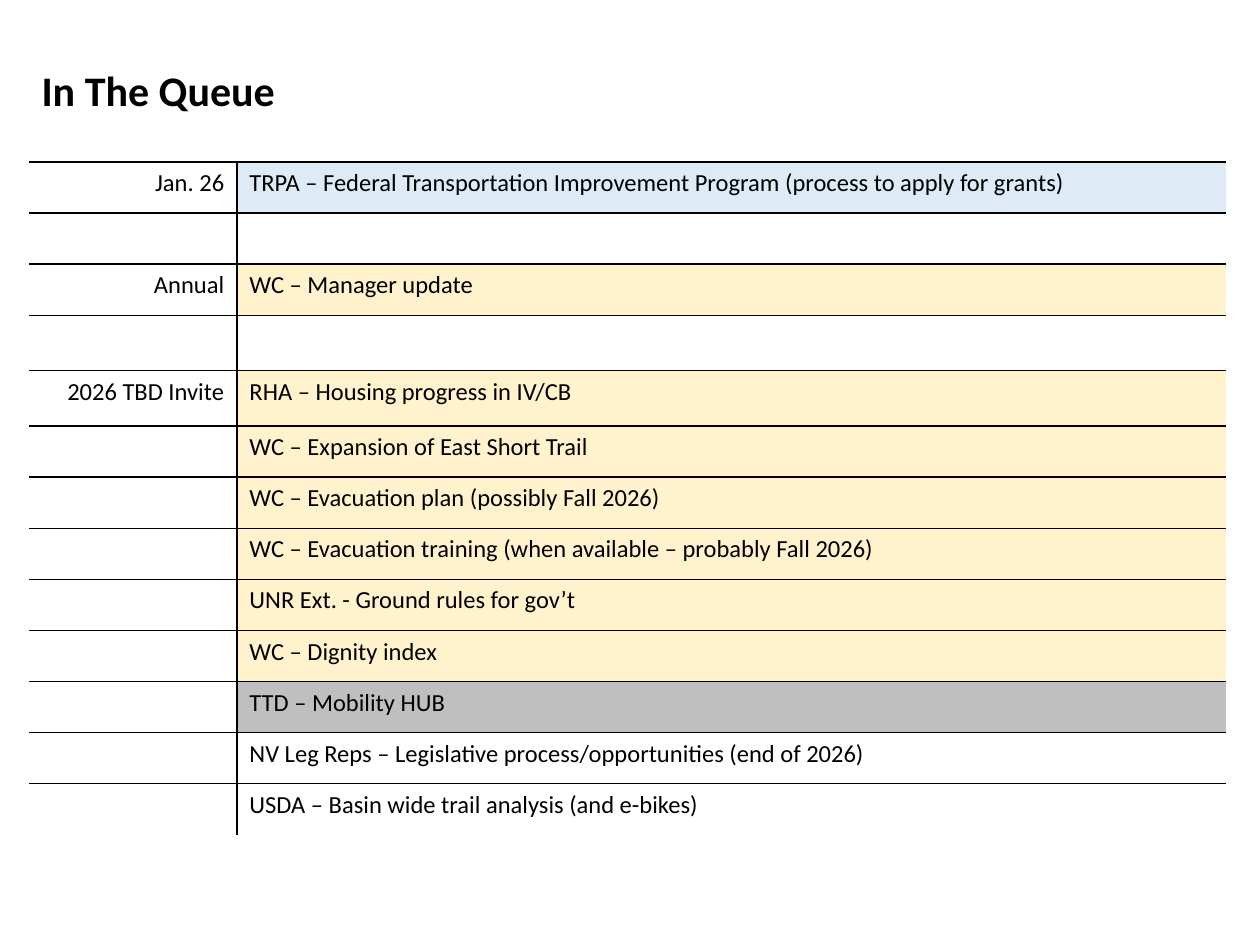
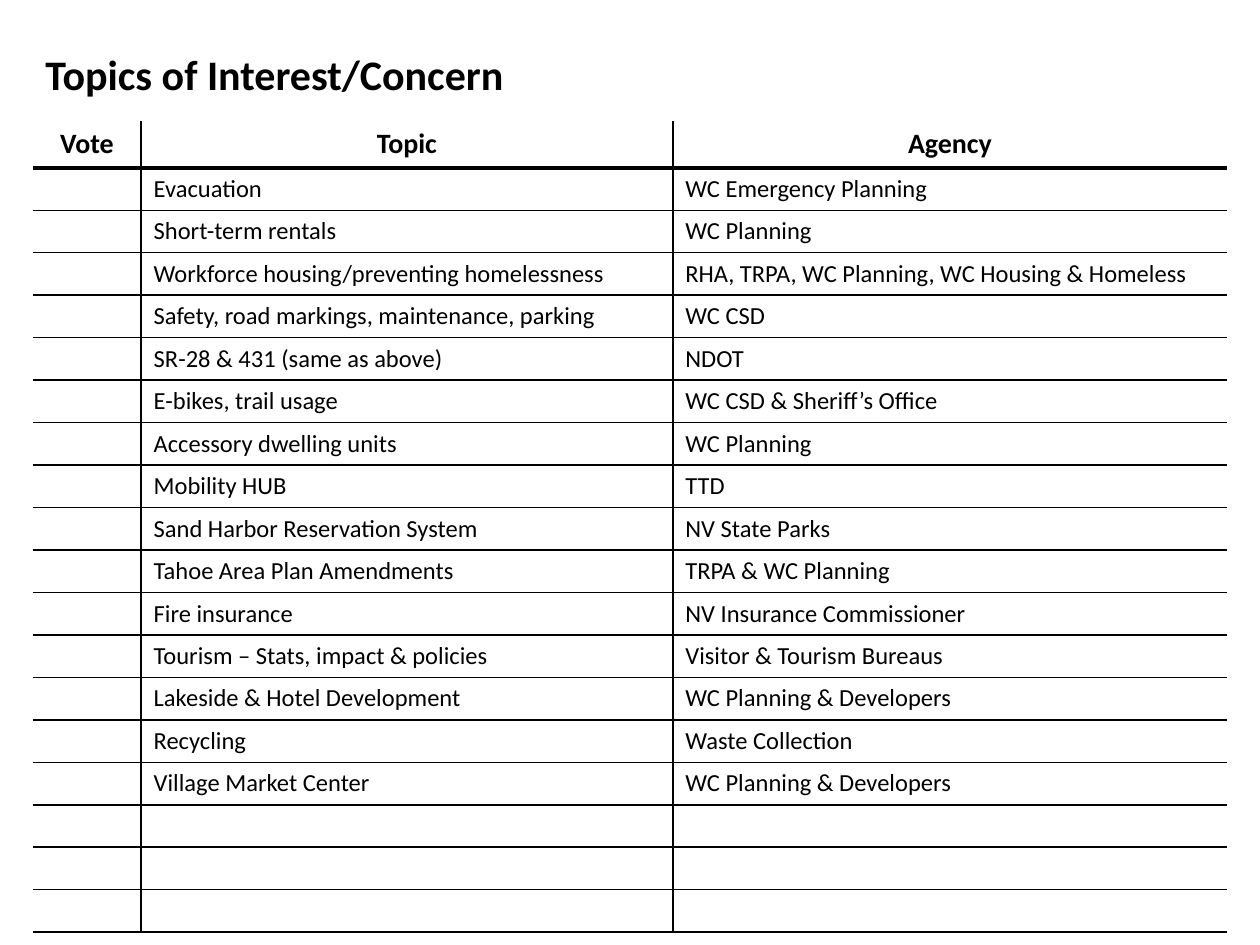
from dataclasses import dataclass

from lxml.etree import SubElement
from pptx import Presentation
from pptx.dml.color import RGBColor
from pptx.enum.text import MSO_ANCHOR as Anchor, MSO_AUTO_SIZE as AutoSize, PP_ALIGN as Align
from pptx.oxml.ns import qn
from pptx.util import Inches, Pt


@dataclass(frozen=True)
class Theme:
    font: str = "Calibri"
    ink: str = "000000"
    blue: str = "DEEBF7"
    yellow: str = "FFF2CC"
    grey: str = "BFBFBF"
    title_size: int = 24
    header_size: int = 16
    body_size: int = 14
    rule: float = 1
    heavy_rule: float = 2.25
    plain_table: str = "{2D5ABB26-0587-4C30-8999-92F81FD0307C}"


theme = Theme()


def add_text(para, text, size, bold=False):
    """Add one run, or size the line when the paragraph stays empty."""
    if not text:
        SubElement(para._p, qn("a:endParaRPr"), sz=str(size * 100))
        return
    span = para.add_run()
    span.text = text
    span.font.name = theme.font
    span.font.size = Pt(size)
    span.font.bold = bold
    span.font.color.rgb = RGBColor.from_string(theme.ink)


def add_border(cell, side, weight):
    """Rule one side (L, R, T or B); a weight of 0 leaves it unruled."""
    line = SubElement(cell._tc.get_or_add_tcPr(), qn(f"a:ln{side}"), w=str(Pt(weight)))
    if weight:
        color = SubElement(SubElement(line, qn("a:solidFill")), qn("a:srgbClr"))
        color.set("val", theme.ink)
    else:
        SubElement(line, qn("a:noFill"))


# Queue: date, item, fill of the item
queue = [
    ("", "", None),
    ("Jan. 26", "TRPA – Federal Transportation Improvement Program (process to apply for grants)", theme.blue),
    ("", "", None),
    ("Annual", "WC – Manager update", theme.yellow),
    ("", "", None),
    ("2026 TBD Invite", "RHA – Housing progress in IV/CB", theme.yellow),
    ("", "WC – Expansion of East Short Trail", theme.yellow),
    ("", "WC – Evacuation plan (possibly Fall 2026)", theme.yellow),
    ("", "WC – Evacuation training (when available – probably Fall 2026)", theme.yellow),
    ("", "UNR Ext. - Ground rules for gov’t", theme.yellow),
    ("", "WC – Dignity index", theme.yellow),
    ("", "TTD – Mobility HUB", theme.grey),
    ("", "NV Leg Reps – Legislative process/opportunities (end of 2026)", None),
    ("", "USDA – Basin wide trail analysis (and e-bikes)", None),
]

# Topics: topic, agency; the last rows stay open for new topics
topics = [
    ("Evacuation", "WC Emergency Planning"),
    ("Short-term rentals", "WC Planning"),
    ("Workforce housing/preventing homelessness", "RHA, TRPA, WC Planning, WC Housing & Homeless"),
    ("Safety, road markings, maintenance, parking", "WC CSD"),
    ("SR-28 & 431 (same as above)", "NDOT"),
    ("E-bikes, trail usage", "WC CSD & Sheriff’s Office"),
    ("Accessory dwelling units", "WC Planning"),
    ("Mobility HUB", "TTD"),
    ("Sand Harbor Reservation System", "NV State Parks"),
    ("Tahoe Area Plan Amendments", "TRPA & WC Planning"),
    ("Fire insurance", "NV Insurance Commissioner"),
    ("Tourism – Stats, impact & policies", "Visitor & Tourism Bureaus"),
    ("Lakeside & Hotel Development", "WC Planning & Developers"),
    ("Recycling", "Waste Collection"),
    ("Village Market Center", "WC Planning & Developers"),
] + [("", "")] * 3

# tall_rows gives heights that differ; the other rows share the rest equally
pages = [
    dict(
        title="In The Queue", title_box=(0.23, 0.4, 8.62, 0.68),
        table_box=(0.23, 0.88, 9.5, 5.75), columns=(1.65, 7.85),
        tall_rows={4: 0.44, 5: 0.44},
        rows=[(date, item) for date, item, _ in queue],
        fills=[(None, fill) for _, _, fill in queue],
        aligns=(Align.RIGHT, Align.LEFT), has_header=False,
    ),
    dict(
        title="Topics of Interest/Concern", title_box=(0.26, 0.16, 8.62, 0.9),
        table_box=(0.26, 0.96, 9.48, 6.37), columns=(0.86, 4.22, 4.4),
        tall_rows={0: 0.34},
        rows=[("Vote", "Topic", "Agency")] + [("", topic, agency) for topic, agency in topics],
        fills=[(None, None, None)] * (len(topics) + 1),
        aligns=(Align.LEFT,) * 3, has_header=True,
    ),
]

deck = Presentation()
deck.slide_width, deck.slide_height = Inches(10), Inches(7.5)

for spec in pages:
    page = deck.slides.add_slide(deck.slide_layouts[5])

    # Title
    title = page.shapes.title
    title.left, title.top, title.width, title.height = map(Inches, spec["title_box"])
    frame = title.text_frame
    frame.word_wrap = True
    frame.auto_size = AutoSize.NONE
    frame.vertical_anchor = Anchor.MIDDLE
    para = frame.paragraphs[0]
    para.alignment = Align.LEFT
    para.line_spacing = 0.9
    add_text(para, spec["title"], theme.title_size, bold=True)

    # Table grid
    rows, columns, tall = spec["rows"], spec["columns"], spec["tall_rows"]
    has_header = spec["has_header"]
    box = page.shapes.add_table(len(rows), len(columns), *map(Inches, spec["table_box"]))
    table = box.table
    table.first_row = has_header
    table.horz_banding = False
    table._tbl.tblPr.find(qn("a:tableStyleId")).text = theme.plain_table
    for column, width in zip(table.columns, columns):
        column.width = Inches(width)
    even_height = (spec["table_box"][3] - sum(tall.values())) / (len(rows) - len(tall))
    for number, row in enumerate(table.rows):
        row.height = Inches(tall.get(number, even_height))

    # Cells: rules between neighbours, then fill and text
    last_row, last_column = len(rows) - 1, len(columns) - 1
    header_rule = theme.heavy_rule if has_header else theme.rule
    for r, texts in enumerate(rows):
        is_header = has_header and r == 0
        upright = theme.rule if has_header or r > 0 else 0
        above = 0 if r == 0 else header_rule if r == 1 else theme.rule
        below = header_rule if r == 0 else theme.rule
        if r == last_row and not has_header:
            below = 0
        for c, text in enumerate(texts):
            cell = table.cell(r, c)
            add_border(cell, "L", upright if c > 0 else 0)
            add_border(cell, "R", upright if c < last_column else 0)
            add_border(cell, "T", above)
            add_border(cell, "B", below)
            fill = spec["fills"][r][c]
            if fill:
                cell.fill.solid()
                cell.fill.fore_color.rgb = RGBColor.from_string(fill)
            else:
                cell.fill.background()
            para = cell.text_frame.paragraphs[0]
            para.alignment = Align.CENTER if is_header else spec["aligns"][c]
            add_text(para, text, theme.header_size if is_header else theme.body_size, is_header)

deck.save("out.pptx")
